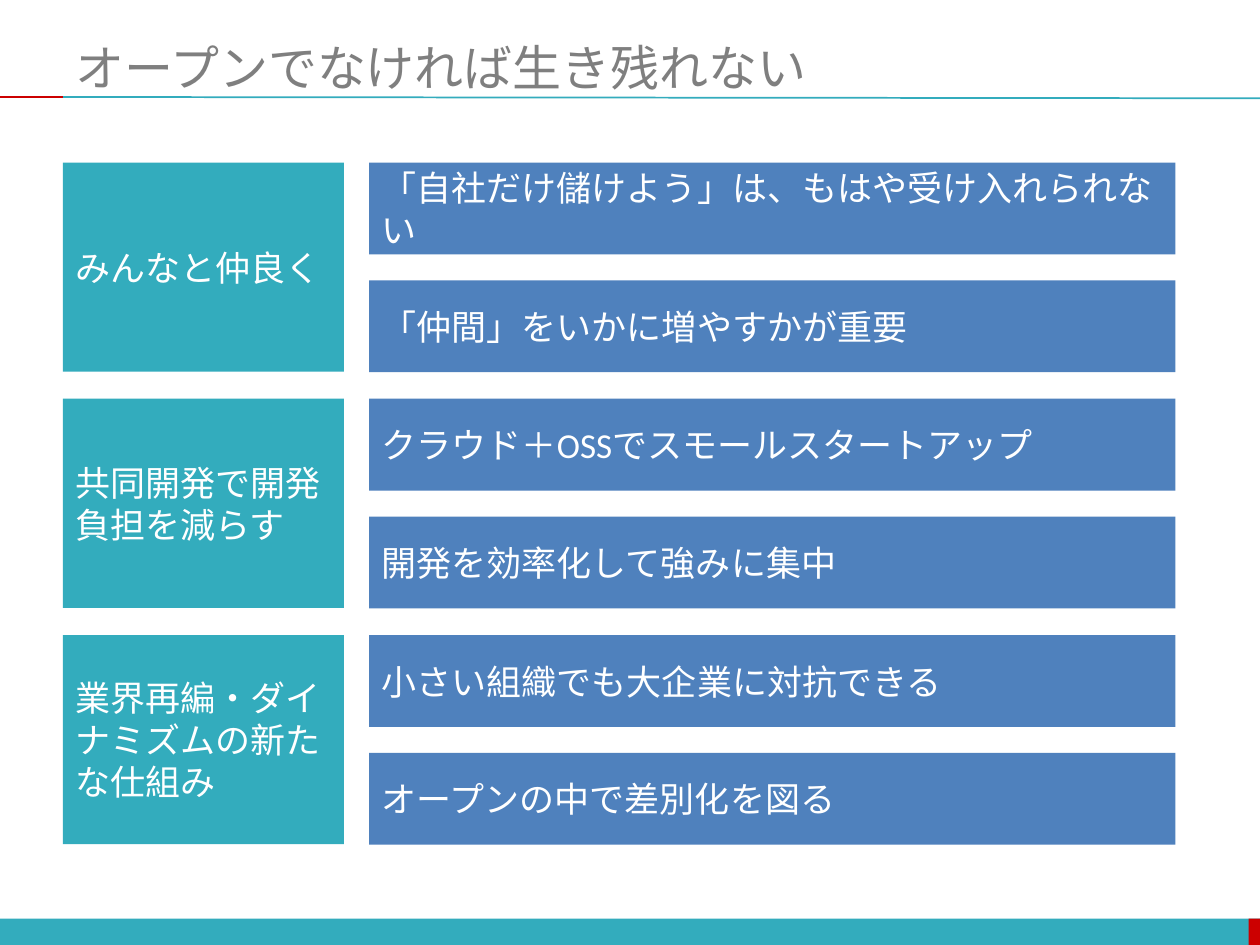
from lxml.etree import SubElement
from pptx import Presentation
from pptx.dml.color import RGBColor
from pptx.enum.shapes import MSO_CONNECTOR, MSO_SHAPE
from pptx.enum.text import MSO_ANCHOR, PP_ALIGN
from pptx.oxml.ns import qn
from pptx.util import Inches, Pt

COLORS = {"teal": "33ACBD", "red": "CC0000", "blue": "4F81BD",
          "gray": "7F7F7F", "white": "FFFFFF"}
LATIN, JAPANESE = "Calibri", "Noto Sans CJK JP"

TOPICS = [
    ("みんなと仲良く", JAPANESE,
     ["「自社だけ儲けよう」は、もはや受け入れられない",
      "「仲間」をいかに増やすかが重要"]),
    ("共同開発で開発負担を減らす", LATIN,
     ["クラウド＋OSSでスモールスタートアップ",
      "開発を効率化して強みに集中"]),
    ("業界再編・ダイナミズムの新たな仕組み", LATIN,
     ["小さい組織でも大企業に対抗できる",
      "オープンの中で差別化を図る"]),
]
TOP, TOPIC_STEP, TOPIC_HEIGHT = 1.29, 1.875, 1.66
POINT_STEP, POINT_HEIGHT = 0.935, 0.73


def color(name):
    return RGBColor.from_string(COLORS[name])


def write(s, text, size, ink, font=LATIN):
    tf = s.text_frame
    frame_format = {"word_wrap": True, "vertical_anchor": MSO_ANCHOR.MIDDLE}
    for name, value in frame_format.items():
        setattr(tf, name, value)
    p = tf.paragraphs[0]
    p.alignment = PP_ALIGN.LEFT
    r = p.add_run()
    r.text = text
    for name, value in {"size": Pt(size), "name": font}.items():
        setattr(r.font, name, value)
    r.font.color.rgb = color(ink)
    SubElement(r.font._element, qn("a:ea")).set("typeface", JAPANESE)


def add_box(slide, x, y, w, h, fill):
    s = slide.shapes.add_shape(MSO_SHAPE.RECTANGLE, Inches(x), Inches(y),
                               Inches(w), Inches(h))
    s.shadow.inherit = False
    s.fill.solid()
    s.fill.fore_color.rgb = color(fill)
    s.line.fill.background()
    return s


def add_rule(slide, x1, y1, x2, y2, ink):
    s = slide.shapes.add_connector(MSO_CONNECTOR.STRAIGHT, Inches(x1), Inches(y1),
                                   Inches(x2), Inches(y2))
    s.line.color.rgb = color(ink)
    s.line.width = Pt(1)
    SubElement(s._element.spPr, qn("a:effectLst"))


def add_title(slide, text):
    s = slide.shapes.add_textbox(Inches(0.5), Inches(0.3), Inches(9.5), Inches(0.46))
    write(s, text, 28, "gray")


def add_topic(slide, y, topic, font, points):
    s = add_box(slide, 0.5, y, 2.23, TOPIC_HEIGHT, "teal")
    write(s, topic, 20, "white", font)
    for i, point in enumerate(points):
        s = add_box(slide, 2.93, y + i * POINT_STEP, 6.4, POINT_HEIGHT, "blue")
        write(s, point, 20, "white")


def main():
    prs = Presentation()
    prs.slide_width, prs.slide_height = Inches(10), Inches(7.5)
    slide = prs.slides.add_slide(prs.slide_layouts[6])
    add_box(slide, 0, 7.29, 10, 0.22, "teal")
    add_box(slide, 9.91, 7.29, 0.1, 0.22, "red")
    add_rule(slide, 0.5, 0.77, 10, 0.78, "teal")
    add_rule(slide, 0, 0.77, 0.5, 0.77, "red")
    add_title(slide, "オープンでなければ生き残れない")
    for i, (topic, font, points) in enumerate(TOPICS):
        add_topic(slide, TOP + i * TOPIC_STEP, topic, font, points)
    prs.save("out.pptx")


if __name__ == "__main__":
    main()
